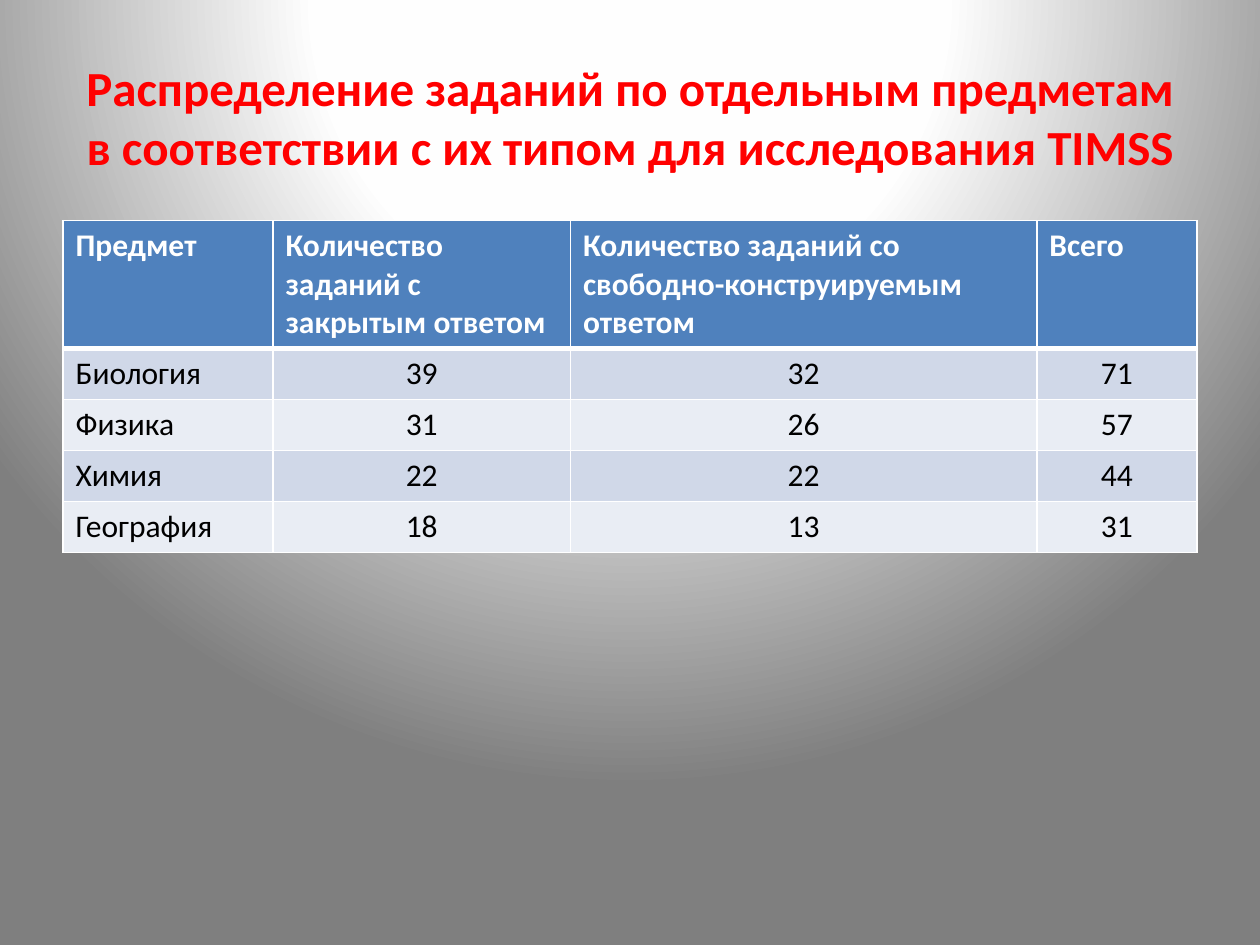
from pptx import Presentation
from pptx.dml.color import RGBColor as RGB
from pptx.enum.text import MSO_ANCHOR as Anchor, PP_ALIGN as Align
from pptx.oxml import parse_xml
from pptx.util import Pt

COLORS = {
    "title": "FF0000",
    "header": "4F81BD",
    "header_text": "FFFFFF",
    "body_text": "000000",
    "odd_row": "D0D8E8",
    "even_row": "E9EDF4",
    "border": "FFFFFF",
}
GRADIENT = [(0, "FFFFFF"), (40, "FEFEFE"), (100, "7F7F7F")]
NS_A = 'xmlns:a="http://schemas.openxmlformats.org/drawingml/2006/main"'
NS_P = 'xmlns:p="http://schemas.openxmlformats.org/presentationml/2006/main"'
FONT = "Calibri"


def style_text(paragraph, size, color, bold, align):
    paragraph.alignment = align
    font = paragraph.font
    font.name, font.size, font.bold = FONT, Pt(size), bold
    font.color.rgb = RGB.from_string(color)


def add_borders(cell, widths):
    properties = cell._tc.get_or_add_tcPr()
    for index, (side, width) in enumerate(widths.items()):
        properties.insert(index, parse_xml(
            f'<a:ln{side} {NS_A} w="{Pt(width)}"><a:solidFill>'
            f'<a:srgbClr val="{COLORS["border"]}"/></a:solidFill></a:ln{side}>'))


presentation = Presentation()
presentation.slide_width, presentation.slide_height = Pt(720), Pt(540)
slide = presentation.slides.add_slide(presentation.slide_layouts[6])

stops = "".join(f'<a:gs pos="{position * 1000}"><a:srgbClr val="{color}"/></a:gs>'
                for position, color in GRADIENT)
slide._element.cSld.insert(0, parse_xml(
    f'<p:bg {NS_P} {NS_A}><p:bgPr><a:gradFill><a:gsLst>{stops}</a:gsLst>'
    '<a:path path="circle"><a:fillToRect l="50000" t="-80000" r="50000" b="180000"/>'
    '</a:path></a:gradFill><a:effectLst/></p:bgPr></p:bg>'))

title = slide.shapes.add_textbox(Pt(36), Pt(21.6), Pt(648), Pt(90)).text_frame
title.word_wrap = True
title.vertical_anchor = Anchor.MIDDLE
title.text = ("Распределение заданий по отдельным предметам "
              "в соответствии с их типом для исследования TIMSS")
style_text(title.paragraphs[0], 28, COLORS["title"], True, Align.CENTER)

header = ["Предмет", "Количество заданий с закрытым ответом",
          "Количество заданий со свободно-конструируемым ответом", "Всего"]
subjects = [("Биология", 39, 32), ("Физика", 31, 26), ("Химия", 22, 22), ("География", 18, 13)]
rows = [header] + [[name, closed, free, closed + free] for name, closed, free in subjects]
column_widths = [120, 170, 266.5, 91.5]
row_heights = [73] + [29.2] * len(subjects)

task_table = slide.shapes.add_table(len(rows), len(header), Pt(36), Pt(126),
                                    Pt(sum(column_widths)), Pt(sum(row_heights))).table
for column, width in zip(task_table.columns, column_widths):
    column.width = Pt(width)

for row_index, values in enumerate(rows):
    task_table.rows[row_index].height = Pt(row_heights[row_index])
    is_header = row_index == 0
    row_fill = "header" if is_header else "odd_row" if row_index % 2 else "even_row"
    text_color = COLORS["header_text" if is_header else "body_text"]
    borders = {"L": 1, "R": 1, "T": 3 if row_index == 1 else 1, "B": 3 if is_header else 1}
    for column_index, value in enumerate(values):
        cell = task_table.cell(row_index, column_index)
        cell.text = str(value)
        cell.fill.solid()
        cell.fill.fore_color.rgb = RGB.from_string(COLORS[row_fill])
        align = Align.LEFT if is_header or column_index == 0 else Align.CENTER
        style_text(cell.text_frame.paragraphs[0], 18, text_color, is_header, align)
        add_borders(cell, borders)

presentation.save("out.pptx")
